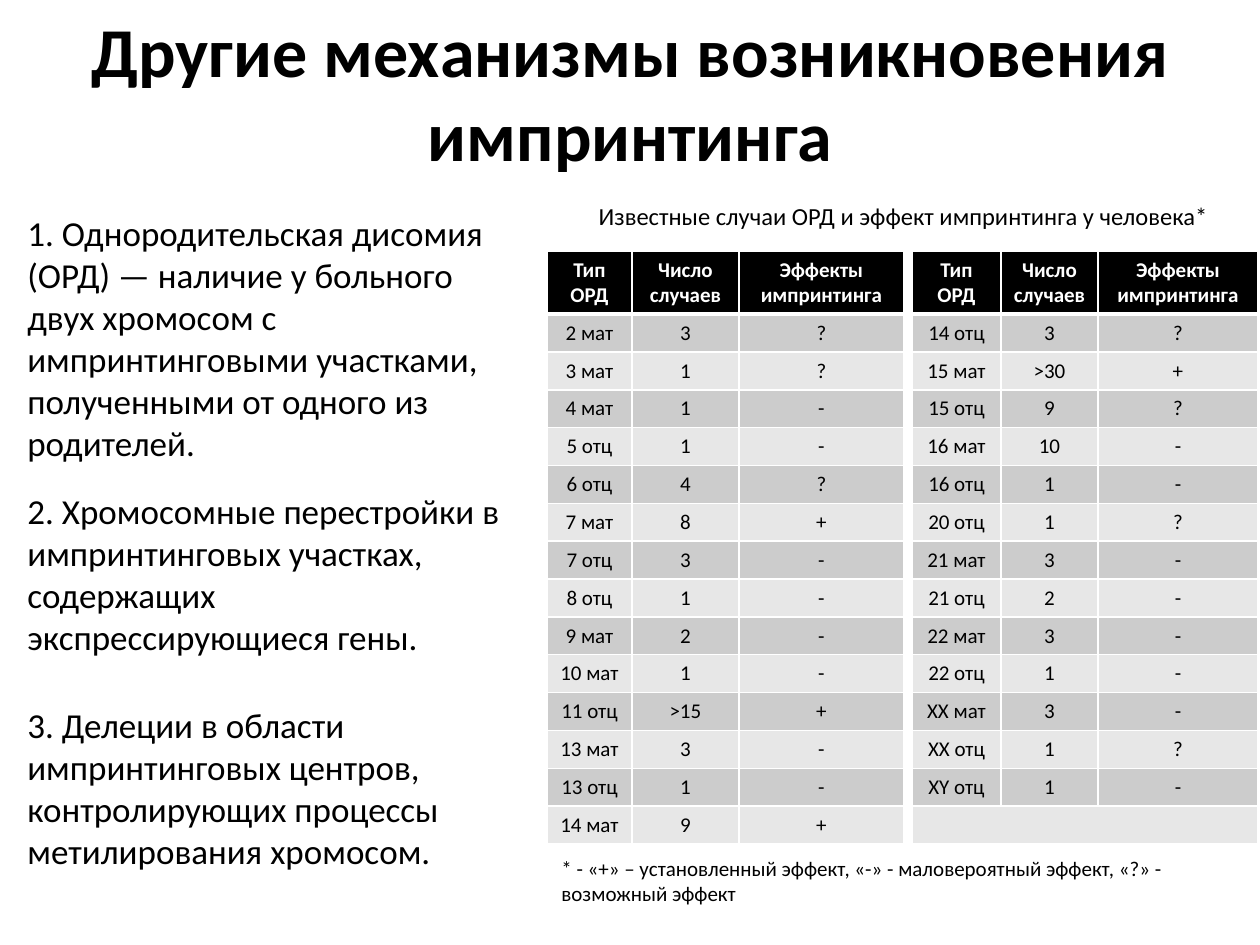
import pptx
import pptx.dml.color
import pptx.enum.text
import pptx.oxml
import pptx.oxml.ns
import pptx.util

EMU_PER_PX = 914400 / 126
ALIGN = pptx.enum.text.PP_ALIGN


def px(length):
    """Turn px into EMU."""
    return pptx.util.Emu(round(length * EMU_PER_PX))


def set_font(paragraph, size, color="000000", bold=False, align=ALIGN.LEFT):
    paragraph.alignment = align
    font = paragraph.font
    font.name = "Calibri"
    font.size = pptx.util.Pt(size)
    font.bold = bold
    font.color.rgb = pptx.dml.color.RGBColor.from_string(color)


presentation = pptx.Presentation()
presentation.slide_width = px(1260)
presentation.slide_height = px(945)
slide = presentation.slides.add_slide(presentation.slide_layouts[5])

title = slide.shapes.title
title.left, title.top, title.width, title.height = px(0), px(0), px(1260), px(183)
title.text_frame.text = "Другие механизмы возникновения импринтинга"
title.text_frame.auto_size = pptx.enum.text.MSO_AUTO_SIZE.NONE
set_font(title.text_frame.paragraphs[0], 40, bold=True, align=ALIGN.CENTER)

# left, top, width, height, size, alignment, text
text_boxes = [
    (15, 205, 507, 267, 20, ALIGN.LEFT,
     "1. Однородительская дисомия (ОРД) — наличие у больного двух хромосом с "
     "импринтинговыми участками, полученными от одного из родителей."),
    (15, 483, 497, 183, 20, ALIGN.LEFT,
     "2. Хромосомные перестройки в импринтинговых участках, содержащих "
     "экспрессирующиеся гены."),
    (15, 697, 507, 183, 20, ALIGN.LEFT,
     "3. Делеции в области импринтинговых центров, контролирующих процессы "
     "метилирования хромосом."),
    (548, 195, 711, 43, 14, ALIGN.CENTER,
     "Известные случаи ОРД и эффект импринтинга у человека*"),
    (549, 849, 711, 63, 12, ALIGN.LEFT,
     "* - «+» – установленный эффект, «-» - маловероятный эффект, "
     "«?» - возможный эффект"),
]
for left, top, width, height, size, align, text in text_boxes:
    text_box = slide.shapes.add_textbox(px(left), px(top), px(width), px(height))
    text_box.text_frame.word_wrap = True
    text_box.text_frame.text = text
    set_font(text_box.text_frame.paragraphs[0], size, align=align)

HEADER = ("Тип ОРД", "Число случаев", "Эффекты импринтинга")
TABLE_TOP, TABLE_HEIGHT, HEADER_HEIGHT, ROW_HEIGHT = 251, 592, 54, 32
left_cases = [
    ("2 мат", "3", "?"), ("3 мат", "1", "?"), ("4 мат", "1", "-"),
    ("5 отц", "1", "-"), ("6 отц", "4", "?"), ("7 мат", "8", "+"),
    ("7 отц", "3", "-"), ("8 отц", "1", "-"), ("9 мат", "2", "-"),
    ("10 мат", "1", "-"), ("11 отц", ">15", "+"), ("13 мат", "3", "-"),
    ("13 отц", "1", "-"), ("14 мат", "9", "+"),
]
right_cases = [
    ("14 отц", "3", "?"), ("15 мат", ">30", "+"), ("15 отц", "9", "?"),
    ("16 мат", "10", "-"), ("16 отц", "1", "-"), ("20 отц", "1", "?"),
    ("21 мат", "3", "-"), ("21 отц", "2", "-"), ("22 мат", "3", "-"),
    ("22 отц", "1", "-"), ("ХХ мат", "3", "-"), ("ХХ отц", "1", "?"),
    ("XY отц", "1", "-"), ("", "", ""),
]
tables = [
    (547, (85, 107, 165), left_cases),
    (912, (89, 97, 160), right_cases),
]
for left, column_widths, cases in tables:
    rows = [HEADER] + cases
    frame = slide.shapes.add_table(len(rows), len(HEADER), px(left), px(TABLE_TOP),
                                   px(sum(column_widths)), px(TABLE_HEIGHT))
    table = frame.table
    for column, width in zip(table.columns, column_widths):
        column.width = px(width)
    for row_index, values in enumerate(rows):
        is_header = row_index == 0
        table.rows[row_index].height = px(HEADER_HEIGHT if is_header else ROW_HEIGHT)
        fill = "000000" if is_header else ("E7E7E7", "CCCCCC")[row_index % 2]
        for column_index, value in enumerate(values):
            cell = table.cell(row_index, column_index)
            cell.text = value
            cell.vertical_anchor = pptx.enum.text.MSO_ANCHOR.MIDDLE
            paragraph = cell.text_frame.paragraphs[0]
            set_font(paragraph, 12, "FFFFFF" if is_header else "000000",
                     is_header, ALIGN.CENTER)
            if not value:
                paragraph._p.get_or_add_endParaRPr().set("sz", "1200")
            properties = cell._tc.get_or_add_tcPr()
            for side in ("lnL", "lnR", "lnT", "lnB"):
                heavy = (is_header and side == "lnB") or (row_index == 1 and side == "lnT")
                properties.append(pptx.oxml.parse_xml(
                    f'<a:{side} {pptx.oxml.ns.nsdecls("a")} w="{38100 if heavy else 12700}">'
                    '<a:solidFill><a:srgbClr val="FFFFFF"/></a:solidFill>'
                    f'</a:{side}>'))
            cell.fill.solid()
            cell.fill.fore_color.rgb = pptx.dml.color.RGBColor.from_string(fill)
    if not any(rows[-1]):
        table.cell(len(rows) - 1, 0).merge(table.cell(len(rows) - 1, len(HEADER) - 1))
    frame.height = px(TABLE_HEIGHT)

presentation.save("out.pptx")
